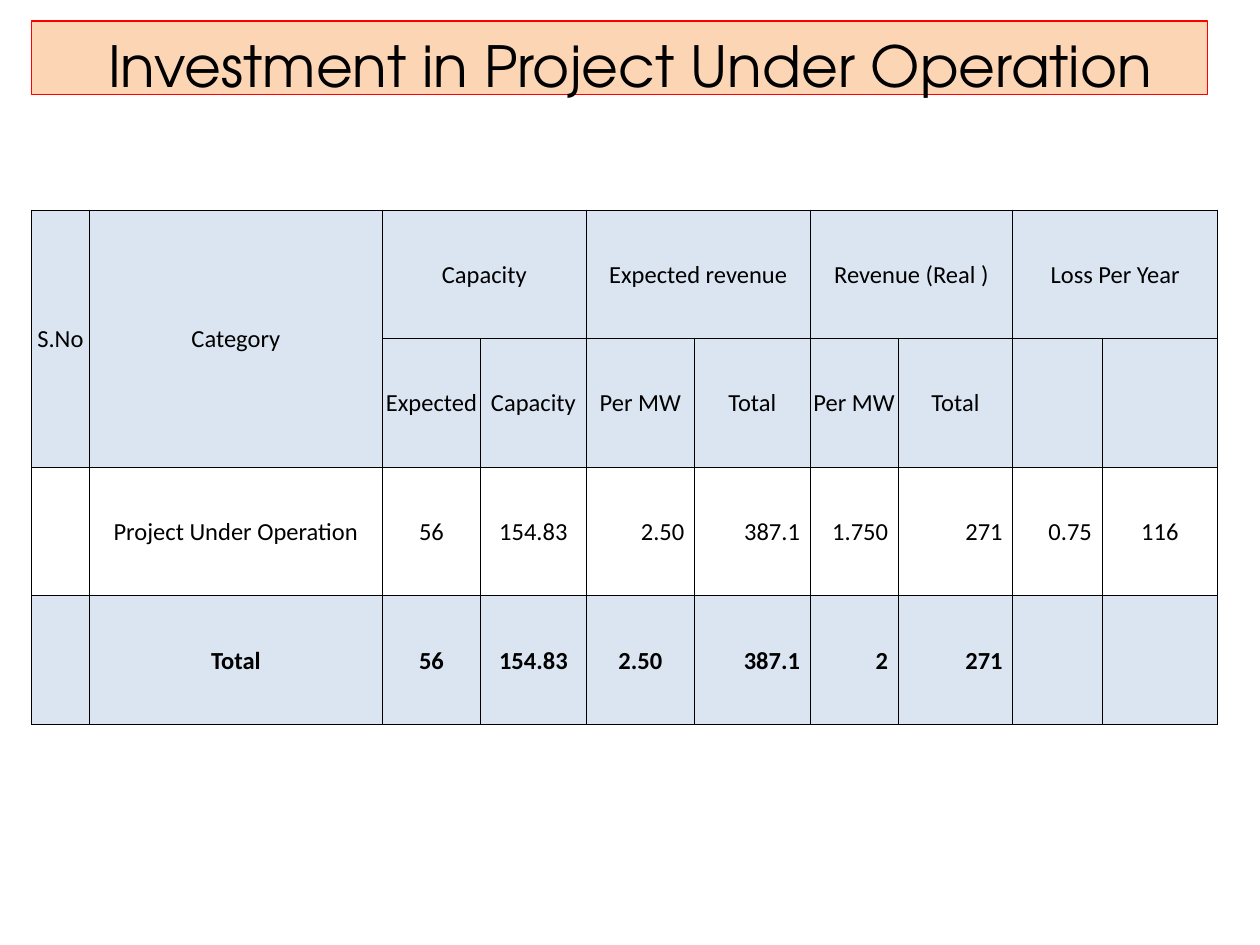
from dataclasses import dataclass

from pptx import Presentation
from pptx.dml.color import RGBColor
from pptx.enum.shapes import MSO_SHAPE as Shape
from pptx.enum.text import MSO_ANCHOR as Anchor, PP_ALIGN as Align
from pptx.oxml import parse_xml
from pptx.oxml.ns import nsdecls
from pptx.util import Inches, Pt


@dataclass(frozen=True)
class Theme:
    ink: str = "000000"
    title_fill: str = "FCD5B5"
    title_line: str = "FF0000"
    band: str = "DBE5F1"
    title_font: str = "TeX Gyre Adventor"
    body_font: str = "Calibri"
    title_size: float = 32.4
    body_size: float = 14
    hairline: float = 0.5
    title_border: float = 0.75


class SlideBuilder:
    COLUMNS, ROWS = 120, 90

    def __init__(self, deck, theme):
        self.theme = theme
        self.column = deck.slide_width / self.COLUMNS
        self.row = deck.slide_height / self.ROWS
        self.slide = deck.slides.add_slide(deck.slide_layouts[6])

    def box(self, left, top, width, height):
        return (round(left * self.column), round(top * self.row),
                round(width * self.column), round(height * self.row))

    def label(self, frame, text, font, size, align, bold=False):
        paragraph = frame.paragraphs[0]
        paragraph.text = text
        paragraph.alignment = align
        paragraph.font.name = font
        paragraph.font.size = Pt(size)
        paragraph.font.bold = bold
        paragraph.font.color.rgb = RGBColor.from_string(self.theme.ink)

    def title(self, text, *place):
        theme = self.theme
        banner = self.slide.shapes.add_shape(Shape.RECTANGLE, *self.box(*place))
        banner.shadow.inherit = False
        banner.fill.solid()
        banner.fill.fore_color.rgb = RGBColor.from_string(theme.title_fill)
        banner.line.color.rgb = RGBColor.from_string(theme.title_line)
        banner.line.width = Pt(theme.title_border)
        frame = banner.text_frame
        frame.word_wrap = True
        frame.vertical_anchor = Anchor.MIDDLE
        frame.margin_left, frame.margin_top = Inches(0.17), Inches(0.12)
        frame.margin_right = frame.margin_bottom = 0
        self.label(frame, text, theme.title_font, theme.title_size, Align.CENTER)

    def border(self, cell):
        properties = cell._tc.get_or_add_tcPr()
        for position, side in enumerate(("lnL", "lnR", "lnT", "lnB")):
            properties.insert(position, parse_xml(
                f'<a:{side} {nsdecls("a")} w="{Pt(self.theme.hairline)}"><a:solidFill>'
                f'<a:srgbClr val="{self.theme.ink}"/></a:solidFill></a:{side}>'))

    def cell(self, cell, text, right, banded, bold):
        cell.vertical_anchor = Anchor.MIDDLE
        cell.margin_left = cell.margin_top = Inches(0.01)
        cell.margin_right = Inches(0.08 if right else 0.01)
        cell.margin_bottom = 0
        if banded:
            cell.fill.solid()
            cell.fill.fore_color.rgb = RGBColor.from_string(self.theme.band)
        else:
            cell.fill.background()
        self.border(cell)
        self.label(cell.text_frame, text, self.theme.body_font, self.theme.body_size,
                   Align.RIGHT if right else Align.CENTER, bold)

    def table(self, rows, weights, merges, right_aligned, banded_rows, bold_rows, *place):
        left, top, width, height = self.box(*place)
        grid = self.slide.shapes.add_table(
            len(rows), len(weights), left, top, width, height).table
        for column, weight in zip(grid.columns, weights):
            column.width = round(width * weight / sum(weights))
        for r, texts in enumerate(rows):
            grid.rows[r].height = round(height / len(rows))
            for c, text in enumerate(texts):
                self.cell(grid.cell(r, c), text, (r, c) in right_aligned,
                          r in banded_rows, r in bold_rows)
        for start, end in merges:
            grid.cell(*start).merge(grid.cell(*end))


def main():
    deck = Presentation()
    deck.slide_width, deck.slide_height = Inches(10), Inches(7.5)
    page = SlideBuilder(deck, Theme())
    page.title("Investment in Project Under Operation", 3, 2, 112, 7)

    investment = [
        ["S.No", "Category", "Capacity", "", "Expected revenue", "",
         "Revenue (Real )", "", "Loss Per Year", ""],
        ["", "", "Expected", "Capacity", "Per MW", "Total", "Per MW", "Total", "", ""],
        ["", "Project Under Operation", "56", "154.83", "2.50", "387.1",
         "1.750", "271", "0.75", "116"],
        ["", "Total", "56", "154.83", "2.50", "387.1", "2", "271", "", ""],
    ]
    column_weights = [46, 233, 78, 84, 86, 92, 70, 91, 71, 92]
    tall_headers = [((0, c), (1, c)) for c in (0, 1)]
    paired_headers = [((0, c), (0, c + 1)) for c in range(2, 10, 2)]
    amounts = {(2, c) for c in range(4, 9)} | {(3, c) for c in range(5, 8)}
    page.table(investment, column_weights, tall_headers + paired_headers, amounts,
               {0, 1, 3}, {3}, 3, 20, 113, 49)
    deck.save("out.pptx")


if __name__ == "__main__":
    main()
